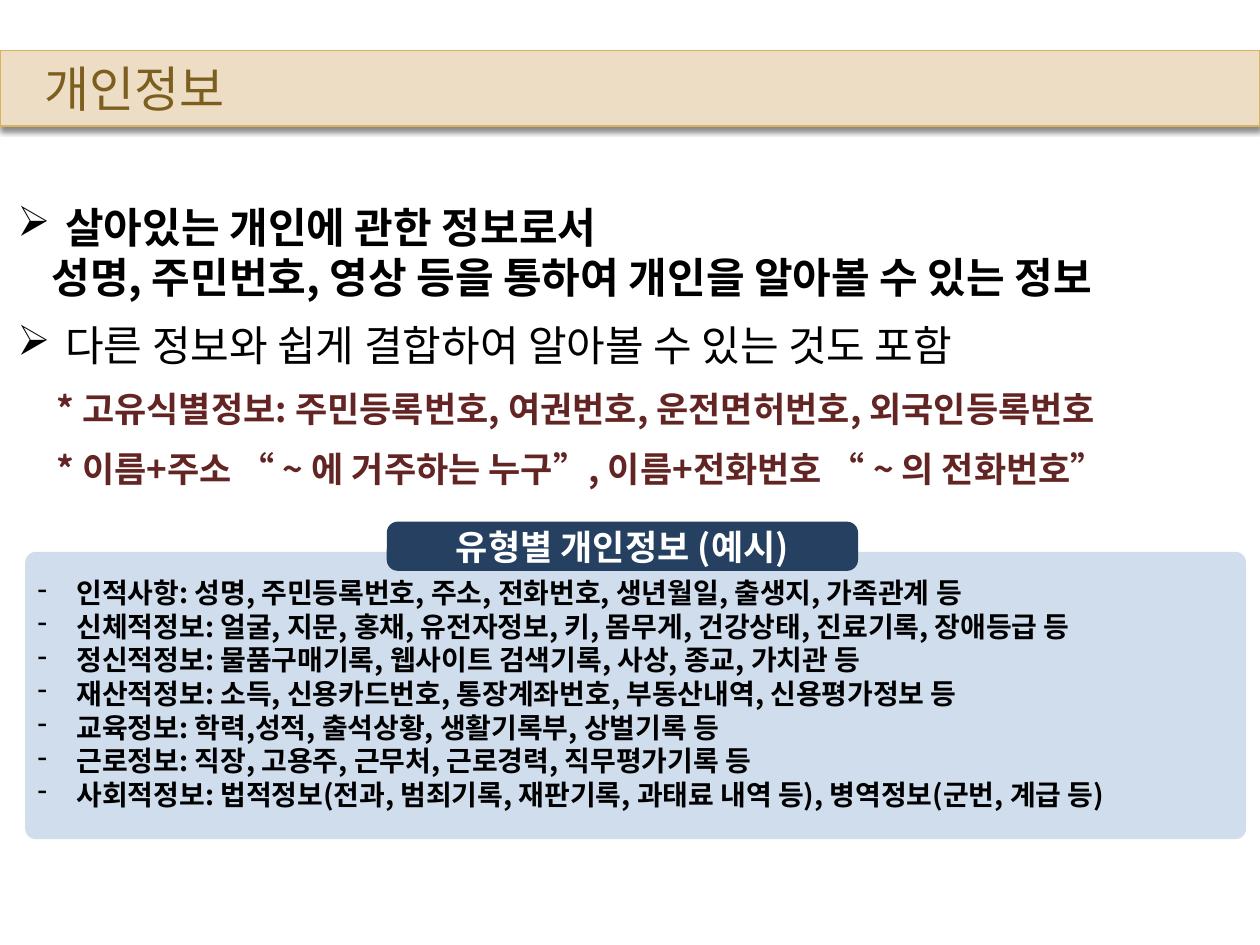
from lxml import etree
from pptx import Presentation
from pptx.dml.color import RGBColor
from pptx.enum import shapes, text
from pptx.oxml.ns import qn
from pptx.util import Inches, Pt

FONT = "Noto Sans CJK KR"
MAROON = "632523"


def color(value):
    return RGBColor.from_string(value)


def set_indent(p, left, hanging=0, bullet=None):
    pPr = p._p.get_or_add_pPr()
    pPr.set("marL", str(Inches(left)))
    pPr.set("indent", str(Inches(-hanging)))
    if bullet:
        etree.SubElement(pPr, qn("a:buChar")).set("char", bullet)


def add_text(tf, lines, size, fill="000000", bold=False, align=None,
             anchor=text.MSO_ANCHOR.TOP, hanging=0, bullet=None):
    tf.word_wrap = True
    tf.vertical_anchor = anchor
    for i, line in enumerate(lines):
        p = tf.paragraphs[0] if i == 0 else tf.add_paragraph()
        p.alignment = align or text.PP_ALIGN.LEFT
        if bullet:
            set_indent(p, hanging, hanging, bullet)
        r = p.add_run()
        r.text = line
        r.font.name, r.font.size, r.font.bold = FONT, Pt(size), bold
        r.font.color.rgb = color(fill)
        etree.SubElement(r._r.get_or_add_rPr(), qn("a:ea")).set("typeface", FONT)


def add_box(s, box, fill, line=None, radius=None):
    kind = shapes.MSO_SHAPE.RECTANGLE if radius is None else shapes.MSO_SHAPE.ROUNDED_RECTANGLE
    sp = s.shapes.add_shape(kind, *map(Inches, box))
    sp.shadow.inherit = False
    sp.fill.solid()
    sp.fill.fore_color.rgb = color(fill)
    if radius is not None:
        sp.adjustments[0] = radius
    if line:
        sp.line.color.rgb = color(line)
        sp.line.width = Pt(0.79)
    else:
        sp.line.fill.background()
    return sp


def add_textbox(s, box, lines, size, **fmt):
    tf = s.shapes.add_textbox(*map(Inches, box)).text_frame
    add_text(tf, lines, size, **fmt)
    return tf


def add_shadow(sp):
    effects = sp._element.spPr.find(qn("a:effectLst"))
    shadow = etree.SubElement(effects, qn("a:outerShdw"), blurRad=str(Pt(3)),
                              dist=str(Pt(2.4)), dir="5400000", rotWithShape="0")
    clr = etree.SubElement(shadow, qn("a:srgbClr"), val="000000")
    etree.SubElement(clr, qn("a:alpha"), val="45000")


def title_bar(s, box, title):
    sp = add_box(s, box, "EDDDC4", line="D8B25C")
    add_shadow(sp)
    sp.text_frame.margin_left = Inches(0.35)
    add_text(sp.text_frame, [title], 28, fill="7C5F1E", anchor=text.MSO_ANCHOR.MIDDLE)


def definition(s, box):
    x, y, w, h = box
    arrow = dict(hanging=0.38, bullet="➢")
    tf = add_textbox(s, (x, y, w, 0.91), ["살아있는 개인에 관한 정보로서"], 24, bold=True, **arrow)
    add_continuation(tf, "성명, 주민번호, 영상 등을 통하여 개인을 알아볼 수 있는 정보")
    add_textbox(s, (x, y + 0.94, w, 0.5),
                ["다른 정보와 쉽게 결합하여 알아볼 수 있는 것도 포함"], 24, **arrow)
    examples = ["* 고유식별정보: 주민등록번호, 여권번호, 운전면허번호, 외국인등록번호",
                "* 이름+주소 “ ~ 에 거주하는 누구”, 이름+전화번호 “ ~ 의 전화번호”"]
    row = 0.47
    top = y + h - row * len(examples)
    for i, line in enumerate(examples):
        add_textbox(s, (x + 0.31, top + i * row, w - 0.32, 0.44), [line], 20,
                    fill=MAROON, bold=True)


def add_continuation(tf, line):
    """Add an unbulleted second line to a bold 24 pt point."""
    p = tf.add_paragraph()
    set_indent(p, 0.27)
    r = p.add_run()
    r.text = line
    r.font.name, r.font.size, r.font.bold = FONT, Pt(24), True
    r.font.color.rgb = color("000000")
    etree.SubElement(r._r.get_or_add_rPr(), qn("a:ea")).set("typeface", FONT)


def examples_panel(s, box, heading, items):
    x, y, w, h = box
    add_box(s, box, "CFDDED", radius=0.037)
    tab = add_box(s, (x + 2.87, y - 0.24, 3.74, 0.39), "254061", radius=0.223)
    add_text(tab.text_frame, [heading], 20, fill="FFFFFF", bold=True,
             align=text.PP_ALIGN.CENTER, anchor=text.MSO_ANCHOR.MIDDLE)
    add_textbox(s, (x, y + 0.14, w - 0.16, 1.99), items, 16, bold=True,
                hanging=0.31, bullet="-")


def main():
    prs = Presentation()
    prs.slide_width, prs.slide_height = Inches(10), Inches(7.5)
    s = prs.slides.add_slide(prs.slide_layouts[6])
    title_bar(s, (0, 0.4, 10, 0.6), "개인정보")
    definition(s, (0.04, 1.55, 9.69, 2.42))
    examples_panel(s, (0.2, 4.38, 9.69, 2.28), "유형별 개인정보 (예시)", [
        "인적사항: 성명, 주민등록번호, 주소, 전화번호, 생년월일, 출생지, 가족관계 등",
        "신체적정보: 얼굴, 지문, 홍채, 유전자정보, 키, 몸무게, 건강상태, 진료기록, 장애등급 등",
        "정신적정보: 물품구매기록, 웹사이트 검색기록, 사상, 종교, 가치관 등",
        "재산적정보: 소득, 신용카드번호, 통장계좌번호, 부동산내역, 신용평가정보 등",
        "교육정보: 학력,성적, 출석상황, 생활기록부, 상벌기록 등",
        "근로정보: 직장, 고용주, 근무처, 근로경력, 직무평가기록 등",
        "사회적정보: 법적정보(전과, 범죄기록, 재판기록, 과태료 내역 등), 병역정보(군번, 계급 등)",
    ])
    prs.save("out.pptx")


if __name__ == "__main__":
    main()
